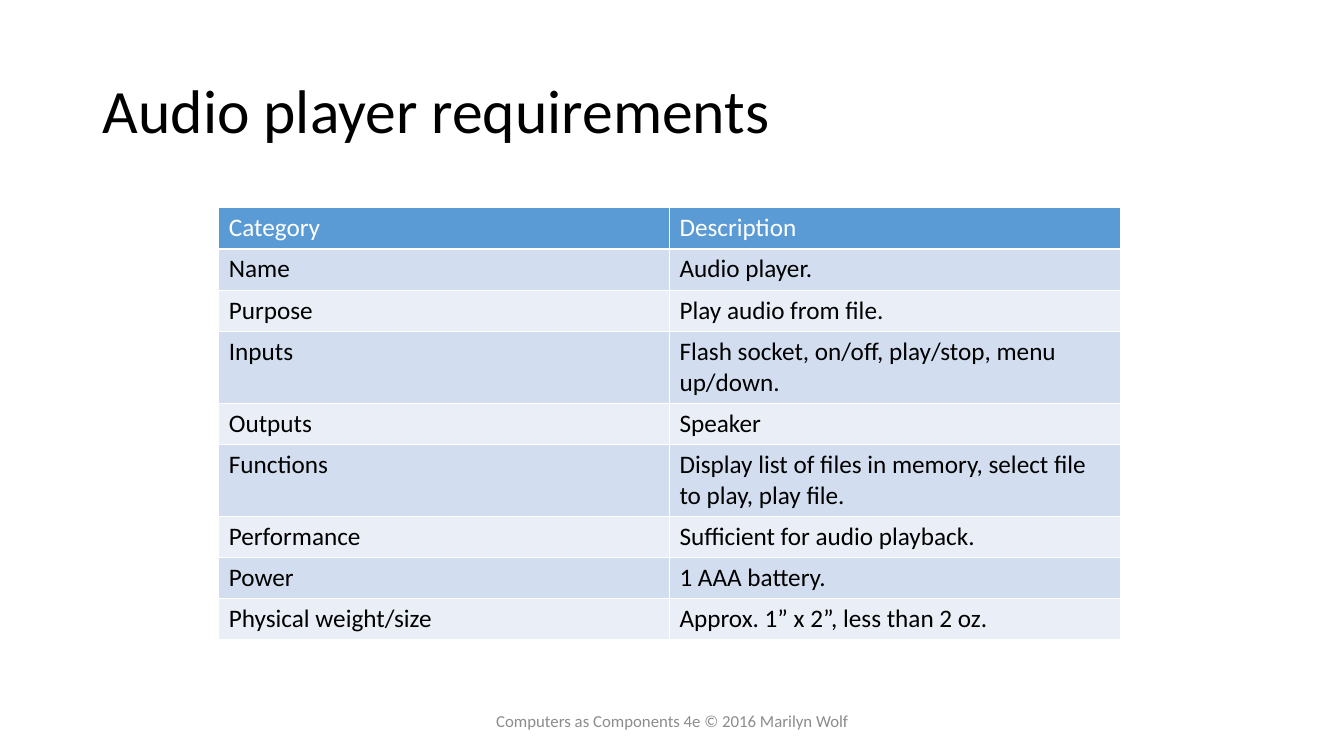
import pptx
import pptx.dml.color
import pptx.enum.text
import pptx.oxml
import pptx.oxml.ns
import pptx.util
from pptx.util import Inches

FONT = "Calibri"
COLORS = {
    "text": "000000",
    "white": "FFFFFF",
    "header": "5B9BD5",
    "band_dark": "D2DEEF",
    "band_light": "EAEFF7",
    "footer": "8C8C8C",
}
REQUIREMENTS = [
    ("Category", "Description"),
    ("Name", "Audio player."),
    ("Purpose", "Play audio from file."),
    ("Inputs", "Flash socket, on/off, play/stop, menu up/down."),
    ("Outputs", "Speaker"),
    ("Functions", "Display list of files in memory, select file to play, play file."),
    ("Performance", "Sufficient for audio playback."),
    ("Power", "1 AAA battery."),
    ("Physical weight/size", "Approx. 1” x 2”, less than 2 oz."),
]


def rgb(name):
    return pptx.dml.color.RGBColor.from_string(COLORS[name])


def write(tf, text, size, color, align=pptx.enum.text.PP_ALIGN.LEFT):
    p = tf.paragraphs[0]
    p.text = text
    p.alignment = align
    p.font.name = FONT
    p.font.size = pptx.util.Pt(size)
    p.font.bold = False
    p.font.color.rgb = rgb(color)
    return p


def place(sp, left, top, width, height):
    sp.left, sp.top = Inches(left), Inches(top)
    sp.width, sp.height = Inches(width), Inches(height)


def add_title(s, text):
    sp = s.shapes.title
    place(sp, 0.92, 0.4, 11.5, 1.45)
    tf = sp.text_frame
    tf.word_wrap = True
    tf.vertical_anchor = pptx.enum.text.MSO_ANCHOR.MIDDLE
    write(tf, text, 44, "text").line_spacing = 0.9


def add_borders(cell):
    tc_pr = cell._tc.get_or_add_tcPr()
    for side in ("lnL", "lnR", "lnT", "lnB"):
        tc_pr.append(pptx.oxml.parse_xml(
            f'<a:{side} {pptx.oxml.ns.nsdecls("a")} w="12700"><a:solidFill>'
            f'<a:srgbClr val="{COLORS["white"]}"/></a:solidFill></a:{side}>'))


def add_requirements_table(s, rows):
    table = s.shapes.add_table(
        len(rows), 2, Inches(2.17), Inches(2.06),
        Inches(8.94), Inches(0.41 * len(rows))).table
    for i, row in enumerate(rows):
        table.rows[i].height = Inches(0.41)
        if i == 0:
            fill, color = "header", "white"
        else:
            fill, color = ("band_dark" if i % 2 else "band_light"), "text"
        for j, text in enumerate(row):
            cell = table.cell(i, j)
            add_borders(cell)
            cell.fill.solid()
            cell.fill.fore_color.rgb = rgb(fill)
            write(cell.text_frame, text, 18, color)


def add_footer(s, text):
    sp = s.shapes.add_textbox(Inches(4.42), Inches(6.95), Inches(4.5), Inches(0.4))
    tf = sp.text_frame
    tf.word_wrap = True
    tf.vertical_anchor = pptx.enum.text.MSO_ANCHOR.MIDDLE
    write(tf, text, 12, "footer", pptx.enum.text.PP_ALIGN.CENTER)


def main():
    prs = pptx.Presentation()
    prs.slide_width, prs.slide_height = Inches(13.33), Inches(7.5)
    s = prs.slides.add_slide(prs.slide_layouts[5])
    add_title(s, "Audio player requirements")
    add_requirements_table(s, REQUIREMENTS)
    add_footer(s, "Computers as Components 4e © 2016 Marilyn Wolf")
    prs.save("out.pptx")


if __name__ == "__main__":
    main()
